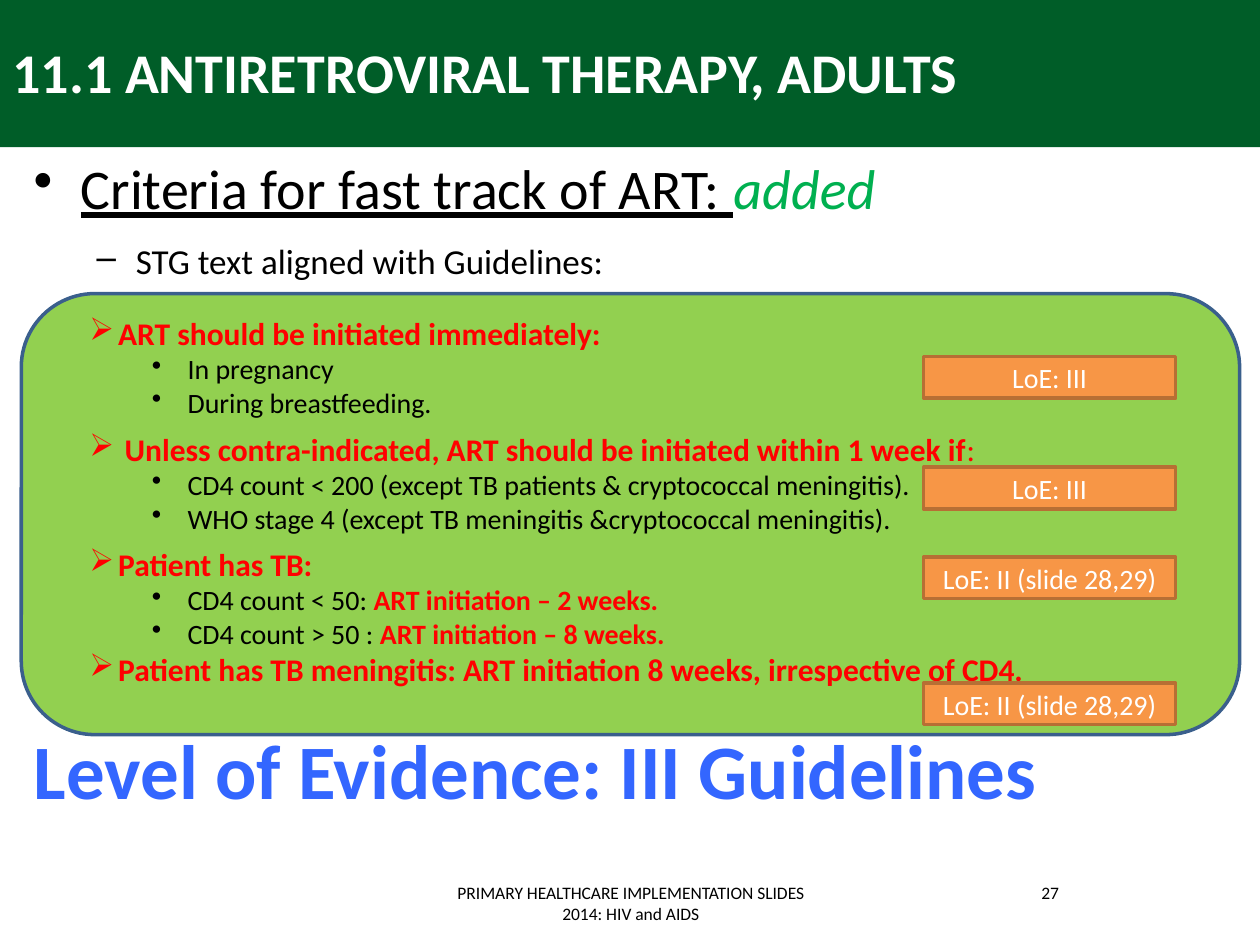
from lxml import etree
from pptx import Presentation
from pptx.dml.color import RGBColor
from pptx.enum.shapes import MSO_SHAPE
from pptx.enum.text import MSO_ANCHOR, PP_ALIGN
from pptx.oxml.ns import qn
from pptx.util import Cm, Pt

RECT, ROUNDED = MSO_SHAPE.RECTANGLE, MSO_SHAPE.ROUNDED_RECTANGLE
TOP, MIDDLE = MSO_ANCHOR.TOP, MSO_ANCHOR.MIDDLE
LEFT, CENTER = PP_ALIGN.LEFT, PP_ALIGN.CENTER

DARK_GREEN = RGBColor(0x00, 0x5D, 0x28)
ADDED_GREEN = RGBColor(0x00, 0xB0, 0x50)
LIGHT_GREEN = RGBColor(0x92, 0xD0, 0x50)
NAVY = RGBColor(0x3A, 0x5F, 0x8C)
ORANGE = RGBColor(0xF7, 0x96, 0x46)
BROWN = RGBColor(0xB7, 0x6F, 0x34)
BLUE = RGBColor(0x33, 0x66, 0xFF)
RED = RGBColor(0xFF, 0x00, 0x00)
BLACK = RGBColor(0x00, 0x00, 0x00)
WHITE = RGBColor(0xFF, 0xFF, 0xFF)


def write(paragraph, runs, size, align=LEFT, bullet=None, margin=0, hanging=0):
    """Fill a paragraph with (text, colour, bold) runs; margin and hanging are in cm."""
    properties = paragraph._p.get_or_add_pPr()
    if bullet:
        properties.set("marL", str(Cm(margin)))
        properties.set("indent", str(-Cm(hanging)))
        etree.SubElement(properties, qn("a:buChar")).set("char", bullet)
    paragraph.alignment = align
    for text, color, bold in runs:
        run = paragraph.add_run()
        run.text = text
        run.font.name = "Calibri"
        run.font.size = Pt(size)
        run.font.bold = bold
        run.font.color.rgb = color


def add_box(left, top, width, height, kind=None, fill=None, line=None, anchor=TOP):
    """Add a text box, or a preset shape when kind is given; lengths are in cm."""
    place = [Cm(length) for length in (left, top, width, height)]
    if kind is None:
        box = slide.shapes.add_textbox(*place)
    else:
        box = slide.shapes.add_shape(kind, *place)
        box.shadow.inherit = False
        box.fill.solid()
        box.fill.fore_color.rgb = fill
        if line is None:
            box.line.fill.background()
        else:
            box.line.color.rgb = line
            box.line.width = Pt(2)
    box.text_frame.word_wrap = True
    box.text_frame.vertical_anchor = anchor
    return box.text_frame


prs = Presentation()
prs.slide_width, prs.slide_height = Cm(25.4), Cm(19.05)
slide = prs.slides.add_slide(prs.slide_layouts[6])

# Title band
add_box(0, 0, 25.4, 2.97, RECT, DARK_GREEN)
title = add_box(0, 0.64, 22.86, 2.12)
write(title.paragraphs[0], [("11.1 ANTIRETROVIRAL THERAPY, ADULTS", WHITE, True)], 32)

# Introduction
intro = add_box(0.43, 2.97, 24.97, 2.9)
criteria = intro.paragraphs[0]
write(criteria, [("Criteria for fast track of ART: ", BLACK, False),
                 ("added", ADDED_GREEN, False)], 32, LEFT, "•", 0.95, 0.95)
criteria.runs[0].font.underline = True
criteria.runs[1].font.italic = True
guideline = intro.add_paragraph()
write(guideline, [("STG text aligned with Guidelines:", BLACK, False)],
      20, LEFT, "–", 2.06, 0.79)
guideline.space_before = Pt(11)

# Level of evidence
evidence = add_box(0.43, 14.45, 24.97, 2.2)
write(evidence.paragraphs[0], [("Level of Evidence: III Guidelines", BLUE, True)], 44)

# Criteria panel: space before each group, heading runs, text margin, items
GROUPS = [
    (0, [("ART should be initiated immediately:", RED, True)], 1.27,
     [[("In pregnancy", BLACK, False)],
      [("During breastfeeding.", BLACK, False)]]),
    (6, [("Unless contra-indicated, ART should be initiated within 1 week if", RED, True),
         (":", RED, False)], 1.4,
     [[("CD4 count < 200 (except TB patients & cryptococcal meningitis).", BLACK, False)],
      [("WHO stage 4 (except TB meningitis &cryptococcal meningitis).", BLACK, False)]]),
    (6, [("Patient has TB:", RED, True)], 1.27,
     [[("CD4 count < 50: ", BLACK, False), ("ART initiation – 2 weeks.", RED, True)],
      [("CD4 count > 50 : ", BLACK, False), ("ART initiation – 8 weeks.", RED, True)]]),
    (0, [("Patient has TB meningitis: ART initiation 8 weeks, irrespective of CD4.",
          RED, True)], 1.27, []),
]
HEADING_BULLET, ITEM_BULLET, ITEM_MARGIN = 0.69, 1.95, 2.67

panel = add_box(0.43, 5.92, 24.56, 8.89, ROUNDED, LIGHT_GREEN, NAVY, MIDDLE)
panel.margin_bottom = Cm(0.65)
heading = panel.paragraphs[0]
for gap, heading_runs, margin, items in GROUPS:
    if heading is None:
        heading = panel.add_paragraph()
    write(heading, heading_runs, 18, LEFT, "➢", margin, margin - HEADING_BULLET)
    heading.space_before = Pt(gap)
    heading = None
    for item_runs in items:
        write(panel.add_paragraph(), item_runs, 16, LEFT, "•",
              ITEM_MARGIN, ITEM_MARGIN - ITEM_BULLET)

# Evidence labels
LABELS = [(7.19, "LoE: III"), (9.42, "LoE: III"),
          (11.23, "LoE: II (slide 28,29)"), (13.77, "LoE: II (slide 28,29)")]
for top, label_text in LABELS:
    label = add_box(18.62, top, 5.08, 0.84, RECT, ORANGE, BROWN, MIDDLE)
    write(label.paragraphs[0], [(label_text, WHITE, False)], 16, CENTER)

# Footer and slide number
FOOTERS = [(8.69, 8.05, "PRIMARY HEALTHCARE IMPLEMENTATION SLIDES 2014: HIV and AIDS"),
           (18.21, 5.92, "27")]
for left, width, footer_text in FOOTERS:
    footer = add_box(left, 17.65, width, 1.02)
    write(footer.paragraphs[0], [(footer_text, BLACK, False)], 10, CENTER)

prs.save("out.pptx")
